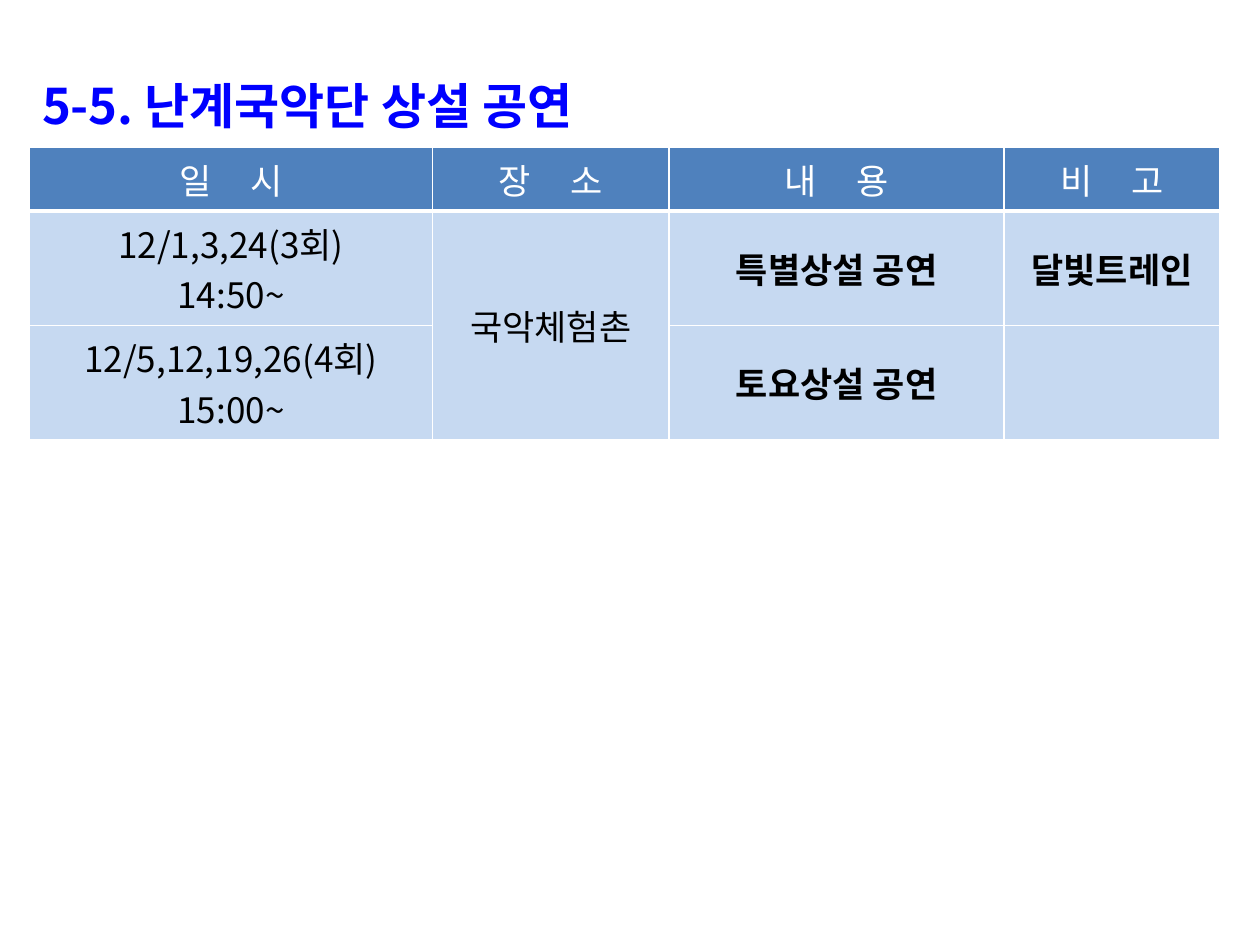
"""Build the slide listing the permanent gugak performances."""
from lxml import etree
from pptx import Presentation
from pptx import util as u
from pptx.dml.color import RGBColor
from pptx.enum import text
from pptx.oxml.ns import qn

TITLE = "5-5. 난계국악단 상설 공연"
HEADERS = ["일 시", "장 소", "내 용", "비 고"]
ROWS = [
    ["12/1,3,24(3회)\n14:50~", "국악체험촌", "특별상설 공연", "달빛트레인"],
    ["12/5,12,19,26(4회)\n15:00~", "", "토요상설 공연", ""],
]
BOLD_COLUMNS = (2, 3)
COL_WIDTHS = [230.4, 135.2, 191.4, 123.4]
ROW_HEIGHTS = [36, 65, 65]
LEFT, TABLE_TOP = 16.8, 84.4

FONT = "Noto Sans CJK KR"
BLUE = RGBColor(0x00, 0x00, 0xFF)
HEADER_FILL = RGBColor(0x4F, 0x81, 0xBD)
BODY_FILL = RGBColor(0xC6, 0xD9, 0xF1)
WHITE = RGBColor(0xFF, 0xFF, 0xFF)
BLACK = RGBColor(0x00, 0x00, 0x00)


def write(tf, content, size=20, color=BLACK, bold=False,
          align=text.PP_ALIGN.CENTER, gap=0, spacing=0):
    for i, line in enumerate(content.split("\n")):
        p = tf.add_paragraph() if i else tf.paragraphs[0]
        p.alignment = align
        pieces = [line[:-1], line[-1]] if gap else [line]
        for n, piece in enumerate(pieces):
            r = p.add_run()
            r.text = piece
            r.font.name, r.font.size, r.font.bold = FONT, u.Pt(size), bold
            r.font.color.rgb = color
            rpr = r.font._element
            etree.SubElement(rpr, qn("a:ea"), typeface=FONT)
            extra = spacing if n else gap or spacing
            if extra:
                rpr.set("spc", str(round(extra * 100)))


def set_borders(cell, **widths):
    tcpr = cell._tc.get_or_add_tcPr()
    for i, side in enumerate("LRTB"):
        ln = etree.Element(qn(f"a:ln{side}"), w=str(u.Pt(widths.get(side, 1))))
        fill = etree.SubElement(ln, qn("a:solidFill"))
        etree.SubElement(fill, qn("a:srgbClr"), val=str(WHITE))
        tcpr.insert(i, ln)


def add_title(s):
    sp = s.shapes.title
    sp.left, sp.top = u.Pt(LEFT), u.Pt(36)
    sp.width, sp.height = u.Pt(sum(COL_WIDTHS)), u.Pt(48)
    tf = sp.text_frame
    tf.auto_size = text.MSO_AUTO_SIZE.NONE
    tf.vertical_anchor = text.MSO_ANCHOR.MIDDLE
    write(tf, TITLE, size=28, color=BLUE, bold=True, align=text.PP_ALIGN.LEFT)


def add_schedule(s):
    grid = [HEADERS] + ROWS
    table = s.shapes.add_table(
        len(grid), len(HEADERS), u.Pt(LEFT), u.Pt(TABLE_TOP),
        u.Pt(sum(COL_WIDTHS)), u.Pt(sum(ROW_HEIGHTS))).table
    table.horz_banding = False
    for column, width in zip(table.columns, COL_WIDTHS):
        column.width = u.Pt(width)
    for row, height in zip(table.rows, ROW_HEIGHTS):
        row.height = u.Pt(height)
    table.cell(1, 1).merge(table.cell(2, 1))
    for i, values in enumerate(grid):
        for j, value in enumerate(values):
            cell = table.cell(i, j)
            cell.vertical_anchor = text.MSO_ANCHOR.MIDDLE
            cell.fill.solid()
            cell.fill.fore_color.rgb = BODY_FILL if i else HEADER_FILL
            set_borders(cell, T=3 if i == 1 else 1, B=1 if i else 3)
            if value and i:
                write(cell.text_frame, value, bold=j in BOLD_COLUMNS)
            elif value:
                write(cell.text_frame, value, color=WHITE, gap=9)


def main():
    prs = Presentation()
    prs.slide_width, prs.slide_height = u.Pt(720), u.Pt(540)
    s = prs.slides.add_slide(prs.slide_layouts[5])
    add_title(s)
    add_schedule(s)
    prs.save("out.pptx")


if __name__ == "__main__":
    main()
